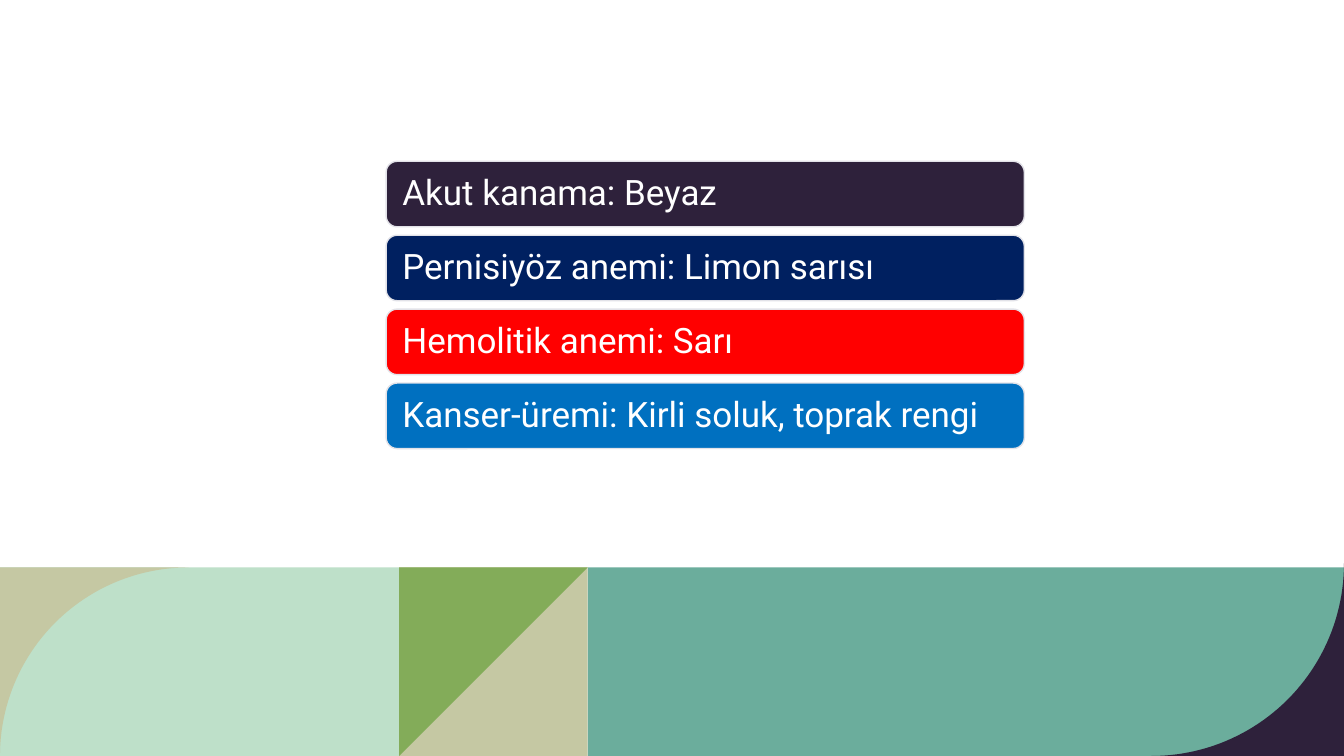
from math import cos, pi, sin

from pptx import Presentation
from pptx.dml.color import RGBColor
from pptx.enum.shapes import MSO_SHAPE as Preset
from pptx.enum.text import MSO_ANCHOR as Anchor, PP_ALIGN as Align
from pptx.util import Inches, Pt

WHITE = RGBColor(0xFF, 0xFF, 0xFF)
OUTLINE = RGBColor(0xE2, 0xE2, 0xE8)
PLUM = RGBColor(0x2E, 0x21, 0x3B)
NAVY = RGBColor(0x00, 0x20, 0x60)
RED = RGBColor(0xFF, 0x00, 0x00)
BLUE = RGBColor(0x00, 0x70, 0xC0)
MINT = RGBColor(0xBE, 0xE0, 0xC9)
SAND = RGBColor(0xC5, 0xC8, 0xA3)
GREEN = RGBColor(0x83, 0xAC, 0x59)
TEAL = RGBColor(0x6B, 0xAD, 0x9C)

SKIN_COLOURS = [
    ("Akut kanama: Beyaz", PLUM),
    ("Pernisiyöz anemi: Limon sarısı", NAVY),
    ("Hemolitik anemi: Sarı", RED),
    ("Kanser-üremi: Kirli soluk, toprak rengi", BLUE),
]
FRAME_FORMAT = {
    "word_wrap": True,
    "vertical_anchor": Anchor.MIDDLE,
    "margin_left": Inches(0.13),
    "margin_right": Inches(0.13),
    "margin_top": Inches(0.1),
    "margin_bottom": Inches(0.1),
}
PARAGRAPH_FORMAT = {"alignment": Align.LEFT, "line_spacing": 0.9}
FONT_FORMAT = {"name": "Roboto", "size": Pt(25)}


def set_attributes(target, values):
    """Set every attribute in values on the target."""
    for name, value in values.items():
        setattr(target, name, value)


def paint(shape, colour):
    """Give a shape a flat fill with no line or shadow."""
    shape.shadow.inherit = False
    shape.fill.solid()
    shape.fill.fore_color.rgb = colour
    shape.line.fill.background()


def add_block(slide, preset, box, colour):
    """Add a flat preset shape in a box given in inches."""
    shape = slide.shapes.add_shape(preset, *map(Inches, box))
    paint(shape, colour)
    return shape


def add_outline(slide, points, colour):
    """Add a flat closed outline through points given in inches."""
    corners = [(Inches(x), Inches(y)) for x, y in points]
    builder = slide.shapes.build_freeform(*corners[0], scale=1.0)
    builder.add_line_segments(corners[1:], close=True)
    paint(builder.convert_to_shape(), colour)


def add_corner(slide, centre, radius, direction, colour, steps=48):
    """Fill the corner of a square left outside a quarter circle."""
    x, y = centre
    reach = radius * direction
    angles = [pi / 2 * step / steps for step in range(steps + 1)]
    arc = [(x + reach * cos(angle), y + reach * sin(angle)) for angle in angles]
    add_outline(slide, [(x + reach, y + reach)] + arc, colour)


def add_bars(slide, left, top, width, height):
    """Stack one labelled rounded bar for each skin colour."""
    bar_height = 0.65
    pitch = (height - bar_height) / (len(SKIN_COLOURS) - 1)
    for index, (label, colour) in enumerate(SKIN_COLOURS):
        box = (left, top + index * pitch, width, bar_height)
        bar = add_block(slide, Preset.ROUNDED_RECTANGLE, box, colour)
        bar.line.color.rgb = OUTLINE
        bar.line.width = Pt(1)
        set_attributes(bar.text_frame, FRAME_FORMAT)
        paragraph = bar.text_frame.paragraphs[0]
        set_attributes(paragraph, PARAGRAPH_FORMAT)
        run = paragraph.add_run()
        run.text = label
        set_attributes(run.font, FONT_FORMAT)
        run.font.color.rgb = WHITE


def add_footer(slide, left, top, width, height):
    """Draw the band of coloured blocks, triangle and round corners."""
    bottom, right = top + height, left + width
    square = left + 3.96
    teal = square + height
    add_block(slide, Preset.RECTANGLE, (left, top, square - left, height), MINT)
    add_corner(slide, (left + height, bottom), height, -1, SAND)
    add_block(slide, Preset.RECTANGLE, (square, top, height, height), SAND)
    add_outline(slide, [(square, top), (square, bottom), (teal, top)], GREEN)
    add_block(slide, Preset.RECTANGLE, (teal, top, right - teal, height), TEAL)
    add_corner(slide, (right - 1.91, bottom - 1.91), 1.91, 1, PLUM)


def main():
    """Build and save the slide."""
    presentation = Presentation()
    presentation.slide_width = Inches(13.33)
    presentation.slide_height = Inches(7.5)
    slide = presentation.slides.add_slide(presentation.slide_layouts[6])
    slide.background.fill.solid()
    slide.background.fill.fore_color.rgb = WHITE
    add_bars(slide, 3.83, 1.6, 6.33, 2.85)
    add_footer(slide, 0, 5.63, 13.33, 1.87)
    presentation.save("out.pptx")


if __name__ == "__main__":
    main()
